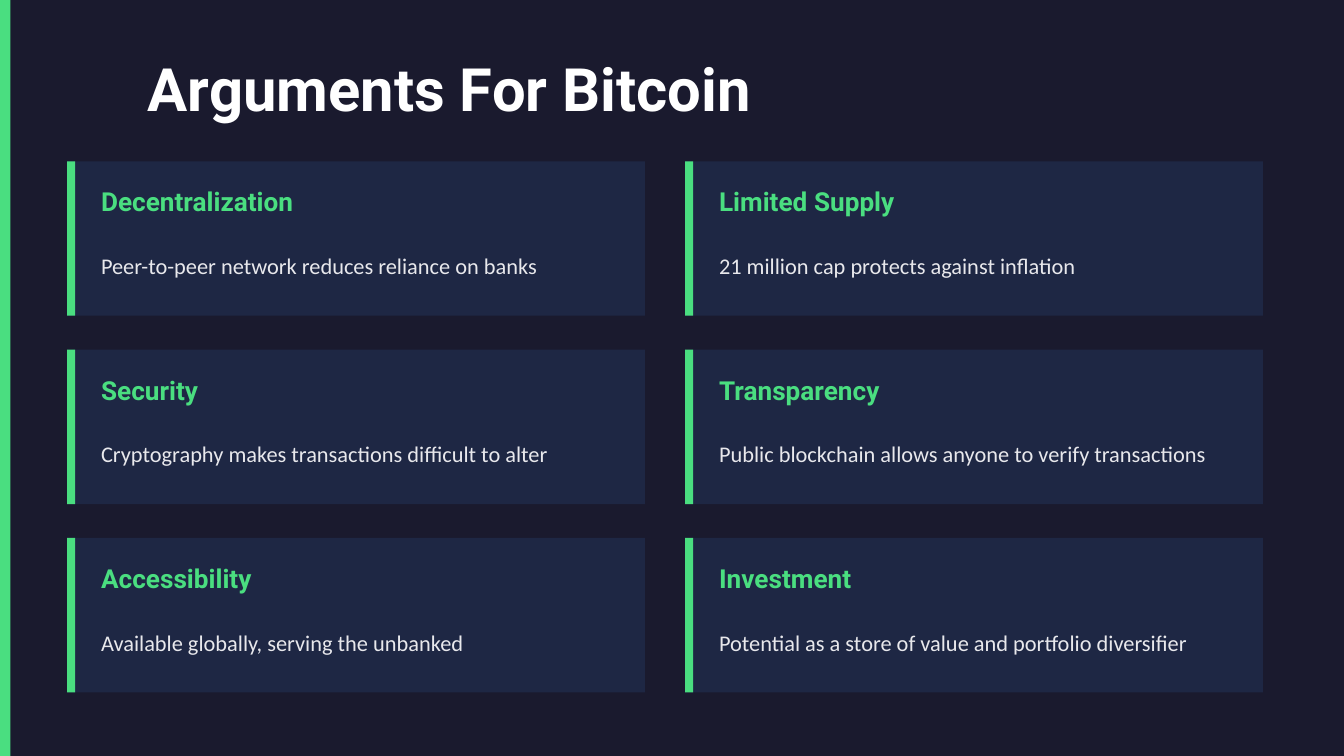
from dataclasses import dataclass

from pptx import Presentation
from pptx.dml.color import RGBColor
from pptx.enum import shapes, text
from pptx.util import Cm, Pt

# Content
TITLE = "Arguments For Bitcoin"
CARDS = [
    ("Decentralization", "Peer-to-peer network reduces reliance on banks"),
    ("Limited Supply", "21 million cap protects against inflation"),
    ("Security", "Cryptography makes transactions difficult to alter"),
    ("Transparency", "Public blockchain allows anyone to verify transactions"),
    ("Accessibility", "Available globally, serving the unbanked"),
    ("Investment", "Potential as a store of value and portfolio diversifier"),
]


@dataclass(frozen=True)
class Theme:
    back: str = "1A1A2E"
    card: str = "1E2744"
    green: str = "4ADE80"
    white: str = "FFFFFF"
    pale: str = "E8E8EC"
    head: str = "Roboto"
    body: str = "Calibri"
    big: int = 32
    mid: int = 14
    small: int = 12


LOOK = Theme()

# Grid, in centimetres
WIDE, HIGH = 25.4, 14.29
COLS = 2
LEFT, TOP = 1.27, 3.05
CARD_W, CARD_H = 10.92, 2.92
GAP_X, GAP_Y = 0.76, 0.64
BAR, EDGE = 0.15, 0.2
PAD_X, PAD_Y = 0.64, 0.25
TEXT_W, HEAD_H, BODY_H = 9.65, 1.02, 1.4


def add_rect(slide, x, y, w, h, color):
    rect = slide.shapes.add_shape(
        shapes.MSO_SHAPE.RECTANGLE, Cm(x), Cm(y), Cm(w), Cm(h))
    rect.shadow.inherit = False
    rect.fill.solid()
    rect.fill.fore_color.rgb = RGBColor.from_string(color)
    rect.line.fill.background()


def write(shape, words, face, size, color, bold=False):
    frame = shape.text_frame
    frame.word_wrap = True
    frame.auto_size = text.MSO_AUTO_SIZE.NONE
    frame.vertical_anchor = text.MSO_ANCHOR.MIDDLE
    frame.margin_left = frame.margin_right = 0
    frame.margin_top = frame.margin_bottom = 0
    para = frame.paragraphs[0]
    para.alignment = text.PP_ALIGN.LEFT
    run = para.add_run()
    run.text = words
    run.font.name = face
    run.font.size = Pt(size)
    run.font.bold = bold
    run.font.color.rgb = RGBColor.from_string(color)


def add_card(slide, x, y, head, body):
    add_rect(slide, x, y, CARD_W, CARD_H, LOOK.card)
    add_rect(slide, x, y, BAR, CARD_H, LOOK.green)
    x, y = x + PAD_X, y + PAD_Y
    box = slide.shapes.add_textbox(Cm(x), Cm(y), Cm(TEXT_W), Cm(HEAD_H))
    write(box, head, LOOK.head, LOOK.mid, LOOK.green, bold=True)
    box = slide.shapes.add_textbox(
        Cm(x), Cm(y + HEAD_H), Cm(TEXT_W), Cm(BODY_H))
    write(box, body, LOOK.body, LOOK.small, LOOK.pale)


def main():
    deck = Presentation()
    deck.slide_width, deck.slide_height = Cm(WIDE), Cm(HIGH)
    slide = deck.slides.add_slide(deck.slide_layouts[5])
    slide.background.fill.solid()
    slide.background.fill.fore_color.rgb = RGBColor.from_string(LOOK.back)

    # Side band and title
    add_rect(slide, 0, 0, EDGE, HIGH, LOOK.green)
    title = slide.shapes.title
    title.left, title.top = Cm(2.79), Cm(0.76)
    title.width, title.height = Cm(20.32), Cm(1.78)
    write(title, TITLE, LOOK.head, LOOK.big, LOOK.white, bold=True)

    # Cards, row by row
    for i, (head, body) in enumerate(CARDS):
        row, col = divmod(i, COLS)
        x = LEFT + col * (CARD_W + GAP_X)
        y = TOP + row * (CARD_H + GAP_Y)
        add_card(slide, x, y, head, body)

    deck.save("out.pptx")


if __name__ == "__main__":
    main()
